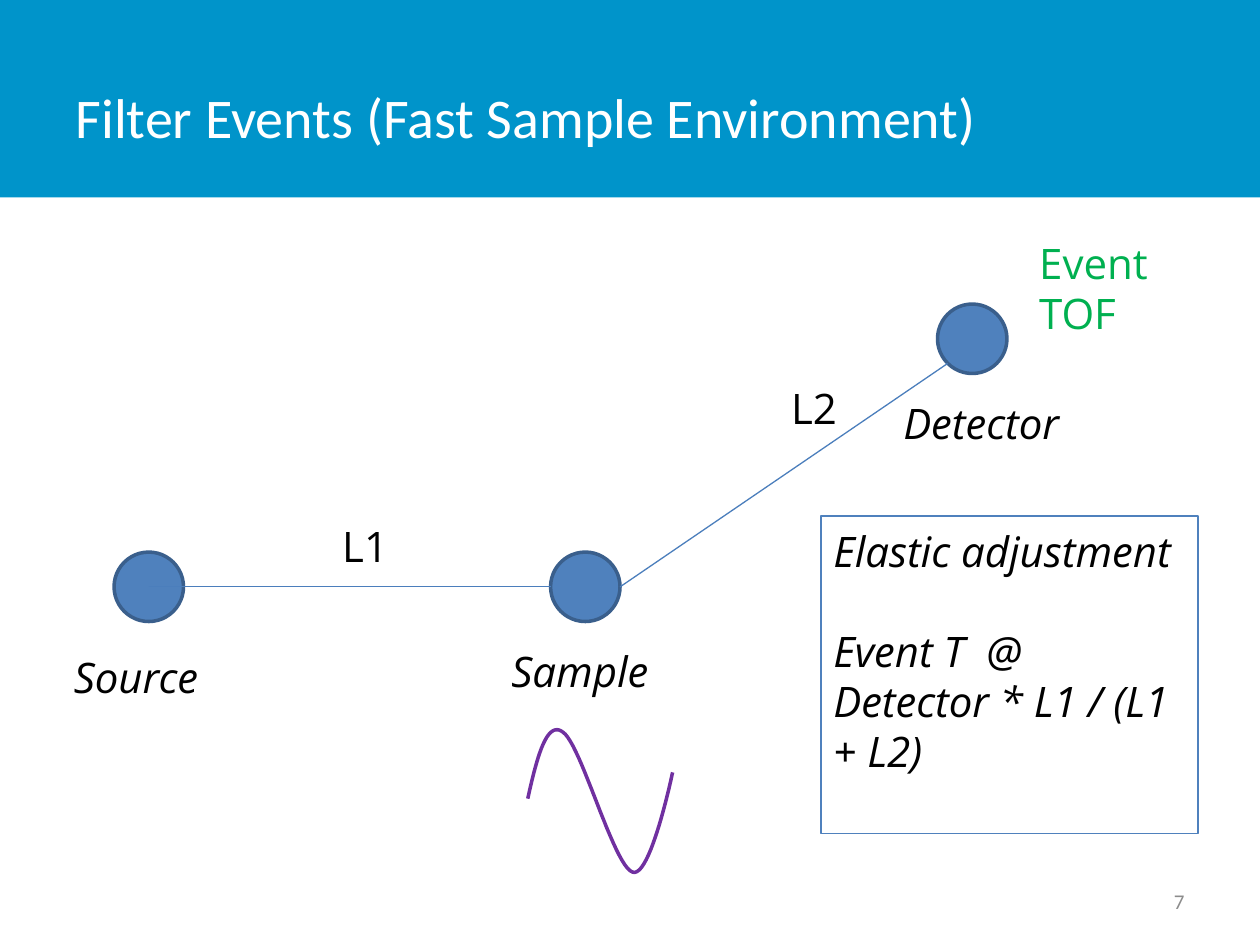
"""Build the slide on filtering events in a fast sample environment."""
from lxml.etree import SubElement
from pptx import Presentation
from pptx.dml.color import RGBColor
from pptx.enum.shapes import MSO_CONNECTOR, MSO_SHAPE
from pptx.enum.text import MSO_ANCHOR, PP_ALIGN
from pptx.oxml.ns import qn
from pptx.util import Cm, Pt

WHITE = RGBColor(0xFF, 0xFF, 0xFF)
BLACK = RGBColor(0, 0, 0)
GRAY = RGBColor(0x8C, 0x8C, 0x8C)
BAND_BLUE = RGBColor(0x00, 0x94, 0xCA)
NODE_FILL = RGBColor(0x4F, 0x81, 0xBD)
NODE_EDGE = RGBColor(0x3A, 0x5F, 0x8C)
PATH_BLUE = RGBColor(0x4B, 0x7E, 0xBC)
GREEN = RGBColor(0x00, 0xB0, 0x50)
PURPLE = RGBColor(0x70, 0x30, 0xA0)

TITLE = "Filter Events (Fast Sample Environment)"
PAGE = "7"
DIAMETER = 1.4
RADIUS = DIAMETER / 2
SOURCE, SAMPLE, DETECTOR = (3, 11.83), (11.8, 11.83), (19.6, 6.83)
FLIGHT_PATHS = [
    (SOURCE, (SAMPLE[0] - RADIUS, SAMPLE[1])),
    ((SAMPLE[0] + RADIUS, SAMPLE[1]),
     (DETECTOR[0] - RADIUS * 0.71, DETECTOR[1] + RADIUS * 0.71)),
]
LABELS = [
    (["L2"], 15.7, 7.52, 1.5, False, BLACK),
    (["L1"], 6.65, 10.31, 1.5, False, BLACK),
    (["Sample"], 10.06, 12.83, 3.5, True, BLACK),
    (["Source"], 1.24, 12.95, 3.3, True, BLACK),
    (["Detector"], 17.96, 7.82, 4.06, True, BLACK),
    (["Event", "TOF"], 20.7, 4.6, 2.74, False, GREEN),
]
ADJUSTMENT = ["Elastic adjustment", "Event T  @ Detector * L1 / (L1 + L2)"]
WAVE_START = (10.64, 16.1)
WAVE_CURVES = [
    ((10.82, 15.29), (11.02, 14.5), (11.35, 14.76)),
    ((11.71, 14.99), (12.37, 17.45), (12.75, 17.58)),
    ((13.11, 17.73), (13.56, 15.57), (13.56, 15.57)),
]
CURVE_STEPS = 24
LINE_PITCH = Pt(28.6)


def style(paragraph, size, color, font="Open Sans", italic=False):
    paragraph.font.name = font
    paragraph.font.size = Pt(size)
    paragraph.font.color.rgb = color
    paragraph.font.italic = italic


def write(frame, lines, color, italic, wrap, gap=0):
    frame.word_wrap = wrap
    frame.vertical_anchor = MSO_ANCHOR.TOP
    frame.margin_top = Cm(0.2)
    for index, line in enumerate(lines):
        paragraph = frame.paragraphs[0] if index == 0 else frame.add_paragraph()
        paragraph.text = line
        paragraph.alignment = PP_ALIGN.LEFT
        paragraph.line_spacing = LINE_PITCH
        if index:
            paragraph.space_before = gap
        style(paragraph, 24, color, italic=italic)


def add_shape(shapes, kind, box, fill=None, edge=None, width=1):
    shape = shapes.add_shape(kind, *map(Cm, box))
    finish(shape, fill, edge, width)
    return shape


def finish(shape, fill, edge, width):
    shape.shadow.inherit = False
    if fill is None:
        shape.fill.background()
    else:
        shape.fill.solid()
        shape.fill.fore_color.rgb = fill
    if edge is None:
        shape.line.fill.background()
    else:
        shape.line.color.rgb = edge
        shape.line.width = Pt(width)


def bezier(start, first, second, end):
    for step in range(1, CURVE_STEPS + 1):
        t = step / CURVE_STEPS
        u = 1 - t
        yield tuple(
            Cm(u**3 * a + 3 * u * u * t * b + 3 * u * t * t * c + t**3 * d)
            for a, b, c, d in zip(start, first, second, end)
        )


def add_wave(shapes):
    points, start = [], WAVE_START
    for curve in WAVE_CURVES:
        points.extend(bezier(start, *curve))
        start = curve[-1]
    builder = shapes.build_freeform(*map(Cm, WAVE_START))
    builder.add_line_segments(points, close=False)
    finish(builder.convert_to_shape(), None, PURPLE, 2)


def add_header(shapes):
    title = shapes.title
    title.left, title.top, title.width, title.height = map(Cm, (1.27, 0.76, 19.84, 3.18))
    title.text_frame.text = TITLE
    title.text_frame.vertical_anchor = MSO_ANCHOR.MIDDLE
    heading = title.text_frame.paragraphs[0]
    heading.alignment = PP_ALIGN.LEFT
    style(heading, 32, WHITE, "Calibri")
    band = add_shape(shapes, MSO_SHAPE.RECTANGLE, (0, 0, 25.4, 3.98), BAND_BLUE)
    title.element.addprevious(band.element)


def add_page_number(shapes):
    frame = shapes.add_textbox(*map(Cm, (18.2, 17.65, 5.93, 1.02))).text_frame
    frame.word_wrap = True
    frame.vertical_anchor = MSO_ANCHOR.MIDDLE
    number = frame.paragraphs[0]
    number.text = PAGE
    number.alignment = PP_ALIGN.RIGHT
    style(number, 12, GRAY, "Calibri")


def main():
    deck = Presentation()
    deck.slide_width, deck.slide_height = Cm(25.4), Cm(19.05)
    shapes = deck.slides.add_slide(deck.slide_layouts[5]).shapes
    add_header(shapes)
    add_page_number(shapes)

    for x, y in (SAMPLE, SOURCE, DETECTOR):
        box = (x - RADIUS, y - RADIUS, DIAMETER, DIAMETER)
        add_shape(shapes, MSO_SHAPE.OVAL, box, NODE_FILL, NODE_EDGE, 2)
    for start, end in FLIGHT_PATHS:
        path = shapes.add_connector(MSO_CONNECTOR.STRAIGHT, *map(Cm, start + end))
        path.line.color.rgb = PATH_BLUE
        path.line.width = Pt(0.75)
        SubElement(path.element.spPr, qn("a:effectLst"))

    for lines, left, top, width, italic, color in LABELS:
        height = 0.25 + 1.02 * len(lines)
        label = shapes.add_textbox(*map(Cm, (left, top, width, height)))
        write(label.text_frame, lines, color, italic, wrap=False)
    add_wave(shapes)
    adjustment = add_shape(shapes, MSO_SHAPE.RECTANGLE, (16.55, 10.4, 7.6, 6.4),
                           edge=NODE_FILL, width=0.75)
    write(adjustment.text_frame, ADJUSTMENT, BLACK, True, wrap=True, gap=LINE_PITCH)
    deck.save("out.pptx")


if __name__ == "__main__":
    main()
